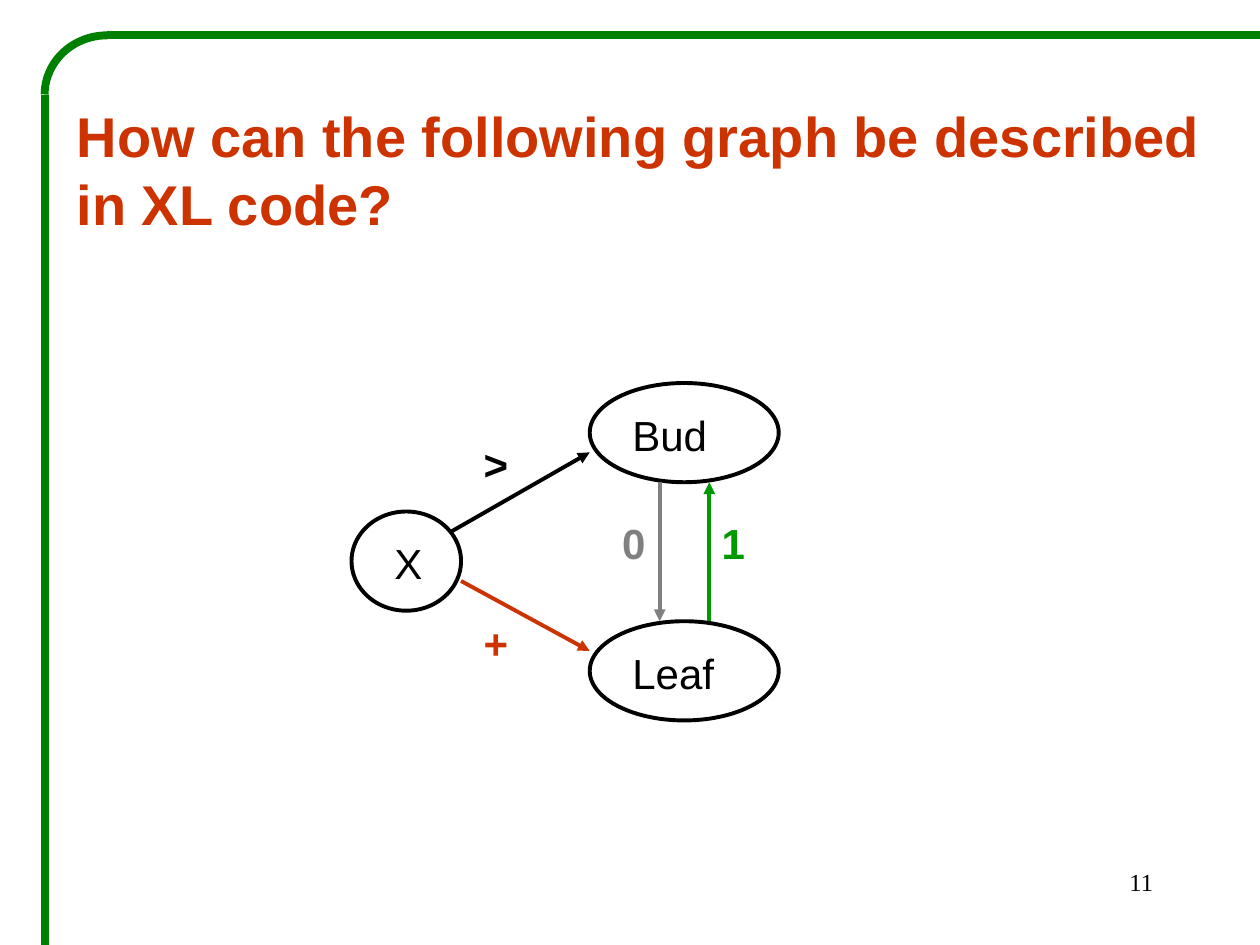
"""Build a slide that asks how a small graph is written in XL code."""
import pptx
import pptx.dml.color
import pptx.enum.shapes
import pptx.enum.text
import pptx.oxml
import pptx.oxml.ns
import pptx.util

Pt = pptx.util.Pt
RGB = pptx.dml.color.RGBColor.from_string
SHAPE = pptx.enum.shapes.MSO_SHAPE
ALIGN = pptx.enum.text.PP_ALIGN
HUES = {"black": "000000", "red": "CC3300", "gray": "808080",
        "green": "009900", "frame": "008000"}

deck = pptx.Presentation()
deck.slide_width, deck.slide_height = Pt(720), Pt(540)
slide = deck.slides.add_slide(deck.slide_layouts[6])
shapes = slide.shapes


def write(text, left, top, width, height, hue, size=24, bold=False,
          font="Arial", align=ALIGN.LEFT):
    box = shapes.add_textbox(Pt(left), Pt(top), Pt(width), Pt(height))
    box.text_frame.word_wrap = True
    line = box.text_frame.paragraphs[0]
    line.alignment = align
    run = line.add_run()
    run.text = text
    run.font.name = font
    run.font.size = Pt(size)
    run.font.bold = bold
    run.font.color.rgb = RGB(HUES[hue])


def draw(start, end, hue, width=2.25, arrow=True):
    line = shapes.add_connector(pptx.enum.shapes.MSO_CONNECTOR.STRAIGHT,
                                *map(Pt, start + end))
    line.line.color.rgb = RGB(HUES[hue])
    line.line.width = Pt(width)
    props = line._element.spPr
    if arrow:
        tip = pptx.oxml.parse_xml(
            f'<a:tailEnd {pptx.oxml.ns.nsdecls("a")} type="triangle"/>')
        line.line._get_or_add_ln().append(tip)
    props.append(pptx.oxml.parse_xml(
        f'<a:effectLst {pptx.oxml.ns.nsdecls("a")}/>'))


draw((720, 20.2), (61.2, 20.2), "frame", 4.5, False)
draw((25.5, 54), (25.5, 540), "frame", 4.5, False)
bend = shapes.add_shape(SHAPE.ARC, Pt(25.5), Pt(20.2), Pt(71.4), Pt(67.6))
bend.adjustments[0], bend.adjustments[1] = 108, 162
bend.shadow.inherit = False
bend.fill.background()
bend.line.color.rgb = RGB(HUES["frame"])
bend.line.width = Pt(4.5)

write("How can the following graph be described in XL code?",
      36.7, 54.7, 663, 85, "red", 32, True)

nodes = [("X", 200.9, 292.3, 62.6, 39.6),
         ("Bud", 337, 218.9, 108, 79.2),
         ("Leaf", 337, 355, 108, 79.2)]
for name, left, top, width, room in nodes:
    node = shapes.add_shape(SHAPE.OVAL, Pt(left), Pt(top), Pt(width), Pt(56.7))
    node.shadow.inherit = False
    node.fill.background()
    node.line.color.rgb = RGB(HUES["black"])
    node.line.width = Pt(2.25)
    write(name, left + 17.3, top + 11.5, room, 36, "black")

edges = [("+", "red", (263.5, 332), (337, 372), 269.3, 349.2),
         ("0", "gray", (377, 275.6), (377, 355), 348.5, 292.3),
         ("1", "green", (405.3, 355), (405.3, 275.6), 405.3, 292.3),
         (">", "black", (257.8, 303.8), (337, 258.5), 269.3, 247)]
for sign, hue, start, end, left, top in edges:
    draw(start, end, hue)
    write(sign, left, top, 30, 36, hue, bold=True)

write("11", 516.2, 491.8, 149.8, 36, "black", 14,
      font="Times New Roman", align=ALIGN.RIGHT)

deck.save("out.pptx")
